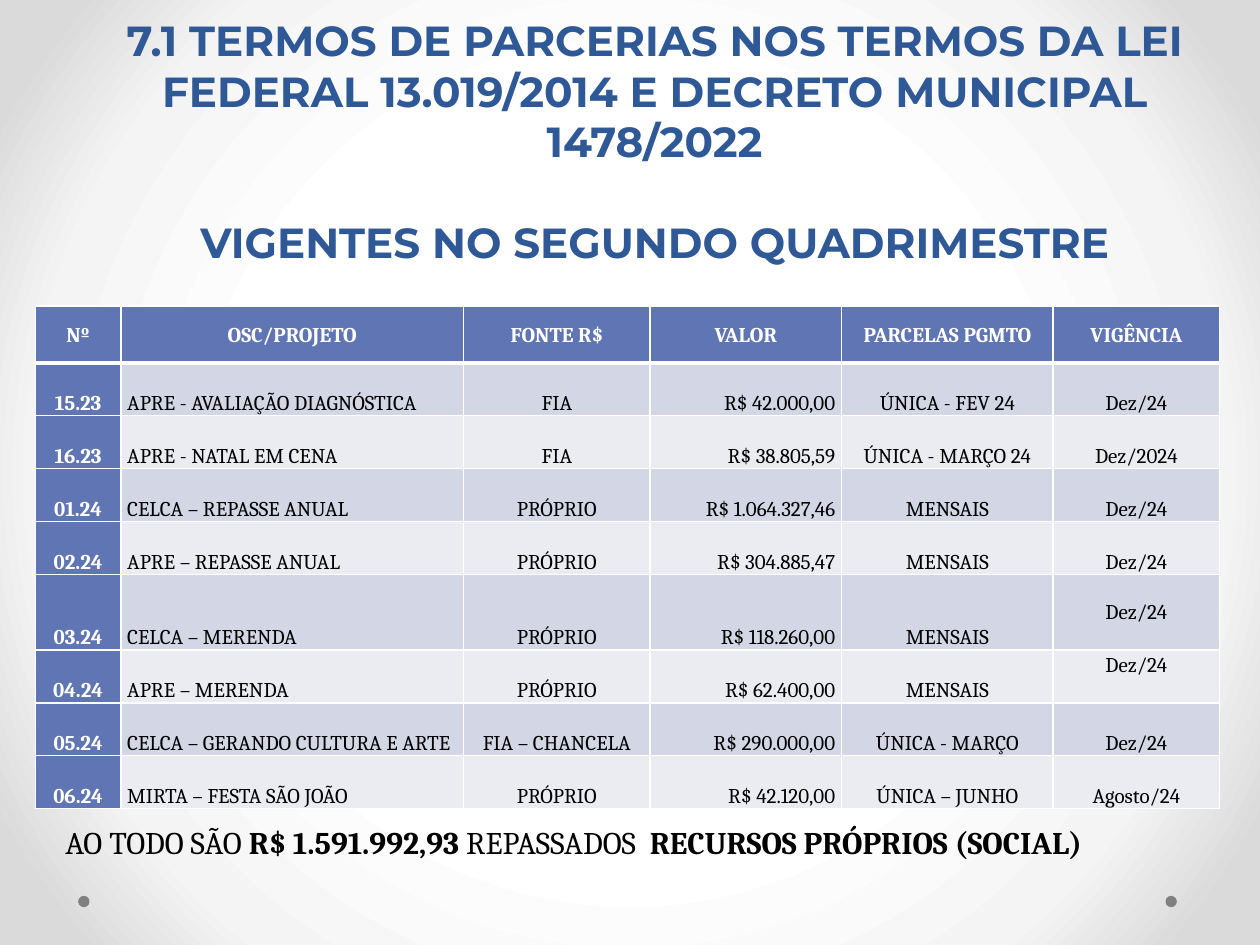
import pptx
import pptx.util
import pptx.dml.color
import pptx.enum.shapes
import pptx.enum.text
import pptx.oxml
import pptx.oxml.ns

RGB = pptx.dml.color.RGBColor
ALIGN = pptx.enum.text.PP_ALIGN
ANCHOR = pptx.enum.text.MSO_ANCHOR

NAVY = RGB(0x2F, 0x58, 0x97)
BLUE = RGB(0x60, 0x76, 0xB4)
BAND_DARK = RGB(0xD2, 0xD6, 0xE5)
BAND_LIGHT = RGB(0xEA, 0xEC, 0xF2)
GRAY = RGB(0x80, 0x80, 0x80)
WHITE = RGB(0xFF, 0xFF, 0xFF)
MIST = RGB(0xF4, 0xF4, 0xF4)
SILVER = RGB(0xDA, 0xDA, 0xDA)
BLACK = RGB(0, 0, 0)

# The slide is a grid of 100 columns by 75 rows
COLUMNS, ROWS = 100, 75

TITLE = [
    "7.1 TERMOS DE PARCERIAS NOS TERMOS DA LEI FEDERAL 13.019/2014 E DECRETO MUNICIPAL 1478/2022",
    "VIGENTES NO SEGUNDO QUADRIMESTRE",
]
HEADER = ["Nº", "OSC/PROJETO", "FONTE R$", "VALOR", "PARCELAS PGMTO", "VIGÊNCIA"]
PARTNERSHIPS = [
    ["15.23", "APRE - AVALIAÇÃO DIAGNÓSTICA", "FIA", "R$ 42.000,00", "ÚNICA - FEV 24", "Dez/24"],
    ["16.23", "APRE - NATAL EM CENA", "FIA", "R$ 38.805,59", "ÚNICA - MARÇO 24", "Dez/2024"],
    ["01.24", "CELCA – REPASSE ANUAL", "PRÓPRIO", "R$ 1.064.327,46", "MENSAIS", "Dez/24"],
    ["02.24", "APRE – REPASSE ANUAL", "PRÓPRIO", "R$ 304.885,47", "MENSAIS", "Dez/24"],
    ["03.24", "CELCA – MERENDA", "PRÓPRIO", "R$ 118.260,00", "MENSAIS", "Dez/24"],
    ["04.24", "APRE – MERENDA", "PRÓPRIO", "R$ 62.400,00", "MENSAIS", "Dez/24"],
    ["05.24", "CELCA – GERANDO CULTURA E ARTE", "FIA – CHANCELA", "R$ 290.000,00",
     "ÚNICA - MARÇO", "Dez/24"],
    ["06.24", "MIRTA – FESTA SÃO JOÃO", "PRÓPRIO", "R$ 42.120,00", "ÚNICA – JUNHO", "Agosto/24"],
]
COL_WIDTHS = [6.8, 27.2, 14.8, 15.2, 16.8, 13.2]
ROW_HEIGHTS = [4.5] + [4.2] * 4 + [6] + [4.2] * 3
COL_ALIGN = [ALIGN.CENTER, ALIGN.LEFT, ALIGN.CENTER, ALIGN.RIGHT, ALIGN.CENTER, ALIGN.CENTER]
RAISED = {(5, 5), (6, 5)}  # end dates that sit above the row's baseline


class Deck:
    title_font, body_font = "Montserrat", "Cambria"

    def __init__(self):
        self.prs = pptx.Presentation()
        self.prs.slide_width = pptx.util.Inches(10)
        self.prs.slide_height = pptx.util.Inches(7.5)
        self.s = self.prs.slides.add_slide(self.prs.slide_layouts[5])

    def x(self, columns):
        return int(self.prs.slide_width * columns / COLUMNS)

    def y(self, rows):
        return int(self.prs.slide_height * rows / ROWS)

    def box(self, left, top, width, height):
        return self.x(left), self.y(top), self.x(width), self.y(height)

    def font(self, r, name, size, color, bold=False):
        r.font.name, r.font.size, r.font.bold = name, pptx.util.Pt(size), bold
        r.font.color.rgb = color

    def background(self, stops):
        self.s.background.fill.gradient()
        old = self.s.element.find(".//" + pptx.oxml.ns.qn("a:gradFill"))
        gs = "".join(f'<a:gs pos="{pos * 1000}"><a:srgbClr val="{color}"/></a:gs>'
                     for pos, color in stops)
        old.getparent().replace(old, pptx.oxml.parse_xml(
            f'<a:gradFill {pptx.oxml.ns.nsdecls("a")} rotWithShape="1"><a:gsLst>{gs}</a:gsLst>'
            '<a:path path="circle"><a:fillToRect l="50000" t="50000" r="50000" b="50000"/>'
            '</a:path></a:gradFill>'))

    def dot(self, left, top, size):
        sp = self.s.shapes.add_shape(pptx.enum.shapes.MSO_SHAPE.OVAL,
                                     *self.box(left, top, size, size))
        sp.shadow.inherit = False
        sp.fill.solid()
        sp.fill.fore_color.rgb = GRAY
        sp.line.fill.background()

    def title(self, lines, *place):
        sp = self.s.shapes.title
        sp.left, sp.top, sp.width, sp.height = self.box(*place)
        tf = sp.text_frame
        tf.text = "\n".join(lines)
        tf.word_wrap = True
        tf.auto_size = pptx.enum.text.MSO_AUTO_SIZE.NONE
        tf.vertical_anchor = ANCHOR.BOTTOM
        for p in tf.paragraphs:
            p.alignment = ALIGN.CENTER
            self.font(p.runs[0], self.title_font, 24, NAVY, True)
        tf.paragraphs[-1].space_before = pptx.util.Pt(29)

    def text(self, parts, *place):
        tf = self.s.shapes.add_textbox(*self.box(*place)).text_frame
        tf.word_wrap = True
        for words, bold in parts:
            r = tf.paragraphs[0].add_run()
            r.text = words
            self.font(r, self.body_font, 18, BLACK, bold)

    def borders(self, cell, **widths):
        tc_pr = cell._tc.get_or_add_tcPr()
        for i, side in enumerate("LRTB"):
            width = int(pptx.util.Pt(widths.get(side, 1)))
            tc_pr.insert(i, pptx.oxml.parse_xml(
                f'<a:ln{side} {pptx.oxml.ns.nsdecls("a")} w="{width}">'
                f'<a:solidFill><a:srgbClr val="{WHITE}"/></a:solidFill></a:ln{side}>'))

    def cell(self, cell, words, align, fill, head, strong, raised):
        cell.fill.solid()
        cell.fill.fore_color.rgb = fill
        cell.margin_left = cell.margin_right = self.x(0.5)
        cell.margin_top = 0
        cell.margin_bottom = self.y(2) if raised else 0
        cell.vertical_anchor = ANCHOR.MIDDLE if head else ANCHOR.BOTTOM
        p = cell.text_frame.paragraphs[0]
        p.text = words
        p.alignment = align
        p.line_spacing = 1.07
        self.font(p.runs[0], self.body_font, 12, WHITE if strong else BLACK, strong)
        self.borders(cell, **({"B": 3} if head else {}))

    def table(self, data, left, top):
        place = self.box(left, top, sum(COL_WIDTHS), sum(ROW_HEIGHTS))
        table = self.s.shapes.add_table(len(data), len(data[0]), *place).table
        for col, width in zip(table.columns, COL_WIDTHS):
            col.width = self.x(width)
        for i, values in enumerate(data):
            table.rows[i].height = self.y(ROW_HEIGHTS[i])
            band = BAND_DARK if i % 2 else BAND_LIGHT
            for j, words in enumerate(values):
                head, strong = i == 0, i == 0 or j == 0
                self.cell(table.cell(i, j), words, ALIGN.CENTER if head else COL_ALIGN[j],
                          BLUE if strong else band, head, strong, (i, j) in RAISED)


def main():
    deck = Deck()

    # Backdrop and corner dots
    deck.background([(50, WHITE), (76, MIST), (92, SILVER)])
    for left in (92.5, 6.2):
        deck.dot(left, 71.1, 0.9)

    # Heading
    deck.title(TITLE, 5.9, 12.3, 92.1, 9.4)

    # Partnerships and the total below them
    deck.table([HEADER] + PARTNERSHIPS, 2.8, 24.3)
    deck.text([("AO TODO SÃO ", False), ("R$ 1.591.992,93 ", True),
               ("REPASSADOS  ", False), ("RECURSOS PRÓPRIOS (SOCIAL)", True)],
              4.2, 64.8, 95.4, 4)

    deck.prs.save("out.pptx")


if __name__ == "__main__":
    main()
